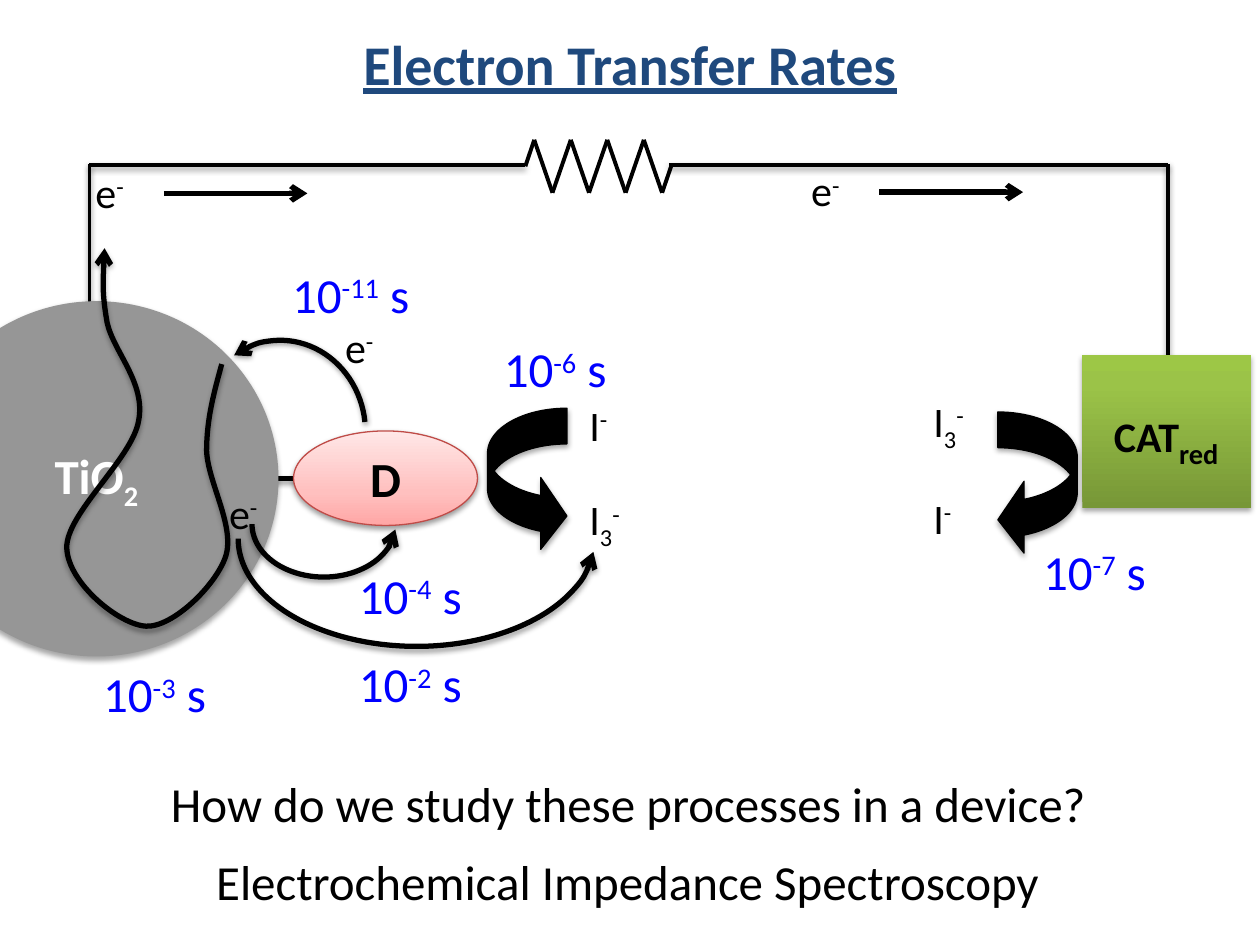
import copy
import itertools
import pptx
import pptx.dml.color
import pptx.enum.shapes
import pptx.enum.text
import pptx.oxml
import pptx.oxml.ns
import pptx.util

Inches = pptx.util.Inches
qn = pptx.oxml.ns.qn
KIND = pptx.enum.shapes.MSO_SHAPE
ALIGN = pptx.enum.text.PP_ALIGN
MIDDLE = pptx.enum.text.MSO_ANCHOR.MIDDLE
FIT = pptx.enum.text.MSO_AUTO_SIZE

BLACK, WHITE, BLUE, NAVY = "000000", "FFFFFF", "0000FF", "1F497D"
SUP, SUB = 30000, -25000
SOFT, DEEP = (20000, 38000), (23000, 35000)  # shadow distance and alpha
ELECTRON = [("e", 0), ("-", SUP)]
IODIDE = [("I", 0), ("-", SUP)]
TRIIODIDE = [("I", 0), ("3", SUB), ("-", SUP)]


def color(code):
    return pptx.dml.color.RGBColor.from_string(code)


def inches(*sizes):
    return [Inches(size) for size in sizes]


def shade(shape, kind):
    """Give a shape or connector an outer shadow, or none."""
    props = shape._element.spPr
    for old in props.findall(qn("a:effectLst")):
        props.remove(old)
    effect = pptx.oxml.parse_xml(
        f'<a:effectLst {pptx.oxml.ns.nsdecls("a")}/>')
    if kind:
        dist, alpha = kind
        effect.append(pptx.oxml.parse_xml(
            f'<a:outerShdw {pptx.oxml.ns.nsdecls("a")} blurRad="40000" dist="{dist}" '
            f'dir="5400000" rotWithShape="0"><a:srgbClr val="{BLACK}">'
            f'<a:alpha val="{alpha}"/></a:srgbClr></a:outerShdw>'))
    props.append(effect)


def stroke(shape, width, code=BLACK, head=None):
    """Set the line; head is headEnd or tailEnd for an arrowhead."""
    shape.line.color.rgb = color(code)
    shape.line.width = pptx.util.Pt(width)
    if head:
        line = shape._element.spPr.find(qn("a:ln"))
        line.append(line.makeelement(qn("a:" + head), {"type": "arrow"}))


def wire(slide, start, end, width=2, shadow=SOFT, head=None):
    link = slide.shapes.add_connector(
        pptx.enum.shapes.MSO_CONNECTOR.STRAIGHT, *inches(*start, *end))
    stroke(link, width, head=head)
    shade(link, shadow)


def form(slide, kind, box, fill=None, line=None, shadow=DEEP, head=None, adjust=()):
    """Add a preset shape; fill is a colour or a list of gradient stops."""
    shape = slide.shapes.add_shape(kind, *inches(*box))
    for index, value in enumerate(adjust):
        shape.adjustments[index] = value
    if fill is None:
        shape.fill.background()
    elif isinstance(fill, str):
        shape.fill.solid()
        shape.fill.fore_color.rgb = color(fill)
    else:
        shape.fill.gradient()
        shape.fill.gradient_angle = 90
        stops = shape._element.spPr.find(".//" + qn("a:gsLst"))
        stops.insert(1, copy.deepcopy(stops[0]))
        for stop, (place, code) in zip(shape.fill.gradient_stops, fill):
            stop.position = place
            stop.color.rgb = color(code)
    if line:
        stroke(shape, *line, head=head)
    else:
        shape.line.fill.background()
    shade(shape, shadow)
    return shape


def write(shape, runs, size=28, code=BLACK, align=ALIGN.CENTER, **style):
    """Fill a shape with runs of (text, baseline) or (text, baseline, size)."""
    line = shape.text_frame.paragraphs[0]
    line.alignment = align
    for text, base, *own in runs:
        run = line.add_run()
        run.text = text
        look = {"name": "Calibri", "size": pptx.util.Pt(own[0] if own else size), **style}
        for key, value in look.items():
            setattr(run.font, key, value)
        run.font.color.rgb = color(code)
        if base:
            run._r.get_or_add_rPr().set("baseline", str(base))


def label(slide, box, runs, wrap=False, fit=FIT.SHAPE_TO_FIT_TEXT, **style):
    text = slide.shapes.add_textbox(*inches(*box))
    text.text_frame.word_wrap = wrap
    text.text_frame.auto_size = fit
    write(text, runs, **style)
    return text


def charge(slide, x, y):
    label(slide, (x, y, 0.44, 0.5), ELECTRON, size=24, align=ALIGN.LEFT)


def rate(slide, x, y, power, width=1.06):
    label(slide, (x, y, width, 0.57), [("10", 0), (f"-{power}", SUP), (" s", 0)],
          code=BLUE, align=ALIGN.LEFT)


def circuit(slide, x, y):
    """Outer wires, the resistor and the electron flow."""
    right = x + 8.56
    wire(slide, (x, y + 1.8), (x, y))
    wire(slide, (right, y + 1.87), (right, y))
    wire(slide, (x, y + 0.01), (x + 3.46, y + 0.01))
    wire(slide, (x + 4.6, y + 0.01), (right, y + 0.01))
    teeth = [(x + 3.53 + 0.145 * i, y + (0.23 if i % 2 else -0.19)) for i in range(8)]
    zigzag = [(x + 3.46, y + 0.02), *teeth, (x + 4.62, y + 0.01)]
    for start, end in itertools.pairwise(zigzag):
        wire(slide, start, end, width=2.25, shadow=None)
    for left, top in ((x - 0.05, y - 0.03), (x + 5.63, y - 0.04)):
        charge(slide, left, top)
        row = top + 0.265
        wire(slide, (left + 0.64, row), (left + 1.78, row), 3, None, "tailEnd")


def trail(slide, x, y):
    """Winding electron track: a start point, then cubic curve points."""
    points = [(1.23, 0.92),
              (1.17, 1.14), (1.11, 1.35), (1.11, 1.61), (1.12, 1.86), (1.34, 2.21), (1.26, 2.45),
              (1.18, 2.68), (0.84, 3.01), (0.63, 3), (0.42, 2.99), (0.01, 2.66), (0, 2.38),
              (-0.01, 2.11), (0.52, 1.67), (0.57, 1.37), (0.63, 1.07), (0.37, 0.82), (0.32, 0.59),
              (0.28, 0.36), (0.29, 0.18), (0.3, 0)]
    spots = [inches(x + dx, y + dy) for dx, dy in points]
    pen = slide.shapes.build_freeform(*spots[0])
    pen.add_line_segments(spots[1:], close=False)
    track = pen.convert_to_shape()
    # Join each three line points into one cubic curve
    steps = track._element.findall(".//" + qn("a:lnTo"))
    for first in range(0, len(steps), 3):
        curve = steps[first].makeelement(qn("a:cubicBezTo"), {})
        steps[first].addprevious(curve)
        for step in steps[first:first + 3]:
            curve.append(step[0])
            step.getparent().remove(step)
    track.fill.background()
    stroke(track, 3, head="tailEnd")
    shade(track, DEEP)


def oxide(slide, x, y):
    """Titania particle with its bond to the dye."""
    wire(slide, (x + 2.42, y + 1.41), (x + 4.06, y + 1.41), 3)
    ball = form(slide, KIND.OVAL, (x, y, 2.89, 2.82), "969696")
    write(ball, [("TiO", 0), ("2", SUB)], code=WHITE, bold=True)
    trail(slide, x + 1.21, y - 0.42)
    rate(slide, x + 1.4, y + 2.83, 3)


def dye(slide, x, y):
    """Dye with the arcs of injection and recombination."""
    oval = form(slide, KIND.OVAL, (x, y, 1.46, 0.75),
                [(0, "FFA6A5"), (0.35, "FFC0BF"), (1, "FFE7E7")], (0.75, "BF4C48"), SOFT)
    write(oval, [("D", 0)], bold=True)
    arcs = [((-0.76, -0.72, 1.33, 1.43), 354.3, 146.04),
            ((-0.44, 0, 2.83, 1.71), 180, 110.57),
            ((-0.33, 0.32, 1.14, 0.84), 180, 110.57)]
    for (dx, dy, wide, high), turn, start in arcs:
        arc = form(slide, KIND.ARC, (x + dx, y + dy, wide, high), line=(3,),
                   shadow=SOFT, head="headEnd", adjust=(start, 0))
        arc.rotation = turn
    charge(slide, x + 0.31, y - 0.92)
    charge(slide, x - 0.61, y + 0.4)
    rate(slide, x - 0.11, y - 1.37, 11, 1.19)
    rate(slide, x + 0.42, y + 1.02, 4)
    rate(slide, x + 0.42, y + 1.72, 2)


def couple(slide, x, y, side, rows, ions, mirror=False):
    """Curved arrow from the upper ion to the lower one."""
    arrow = form(slide, KIND.CURVED_LEFT_ARROW, (x, y, 0.63, 1.14), BLACK,
                 (0.75,), adjust=(0.45, 1.3, 0.33))
    if mirror:
        arrow._element.spPr.find(qn("a:xfrm")).set("flipH", "1")
    for row, ion in zip(rows, ions):
        label(slide, (x + side, y + row, 1.34, 0.5), ion, wrap=True,
              size=24, align=ALIGN.LEFT)


def catalyst(slide, x, y):
    form(slide, KIND.RECTANGLE, (x, y, 1.34, 1.21),
         [(0, "779737"), (0.8, "9BC348"), (1, "9DC746")])
    label(slide, (x + 0.12, y + 0.33, 1.09, 0.5),
          [("CAT", 0, 24), ("red", SUB, 28)], bold=True)
    rate(slide, x - 0.41, y + 1.43, 7)


def words(slide):
    """Title and closing lines."""
    title = label(slide, (0.5, 0, 9, 1), [("Electron Transfer Rates", 0)], wrap=True,
                  fit=FIT.NONE, size=32, code=NAVY, bold=True, underline=True)
    title.text_frame.vertical_anchor = MIDDLE
    label(slide, (1.11, 6.09, 7.75, 0.57),
          [("How do we study these processes in a device?", 0)], wrap=True)
    label(slide, (1.58, 6.71, 6.8, 0.57), [("Electrochemical Impedance Spectroscopy", 0)])


def main():
    deck = pptx.Presentation()
    deck.slide_width, deck.slide_height = inches(10, 7.5)
    slide = deck.slides.add_slide(deck.slide_layouts[6])
    circuit(slide, 0.71, 1.3)
    oxide(slide, -0.68, 2.39)
    dye(slide, 2.33, 3.42)
    couple(slide, 3.87, 3.24, 0.71, (-0.12, 0.63), (IODIDE, TRIIODIDE), mirror=True)
    rate(slide, 3.9, 2.64, 6)
    couple(slide, 7.92, 3.27, -0.61, (-0.18, 0.59), (TRIIODIDE, IODIDE))
    catalyst(slide, 8.59, 2.82)
    words(slide)
    deck.save("out.pptx")


if __name__ == "__main__":
    main()
